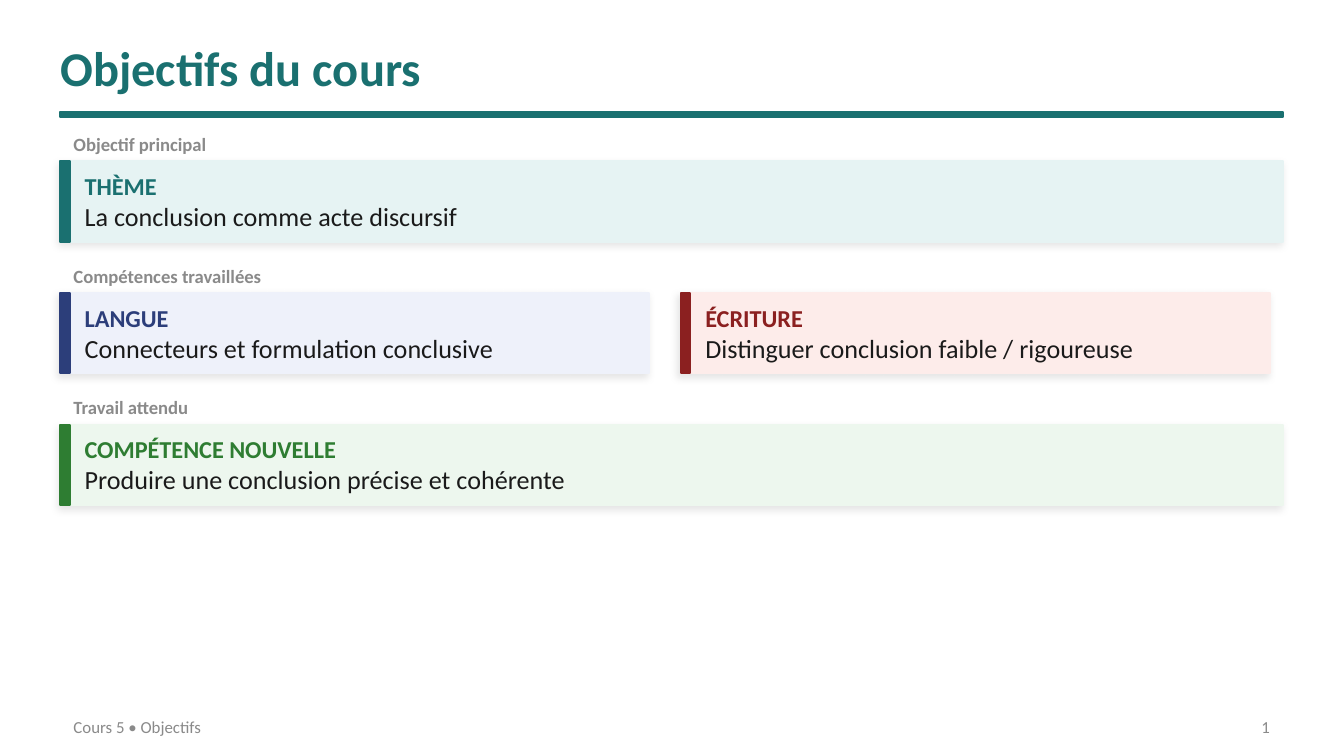
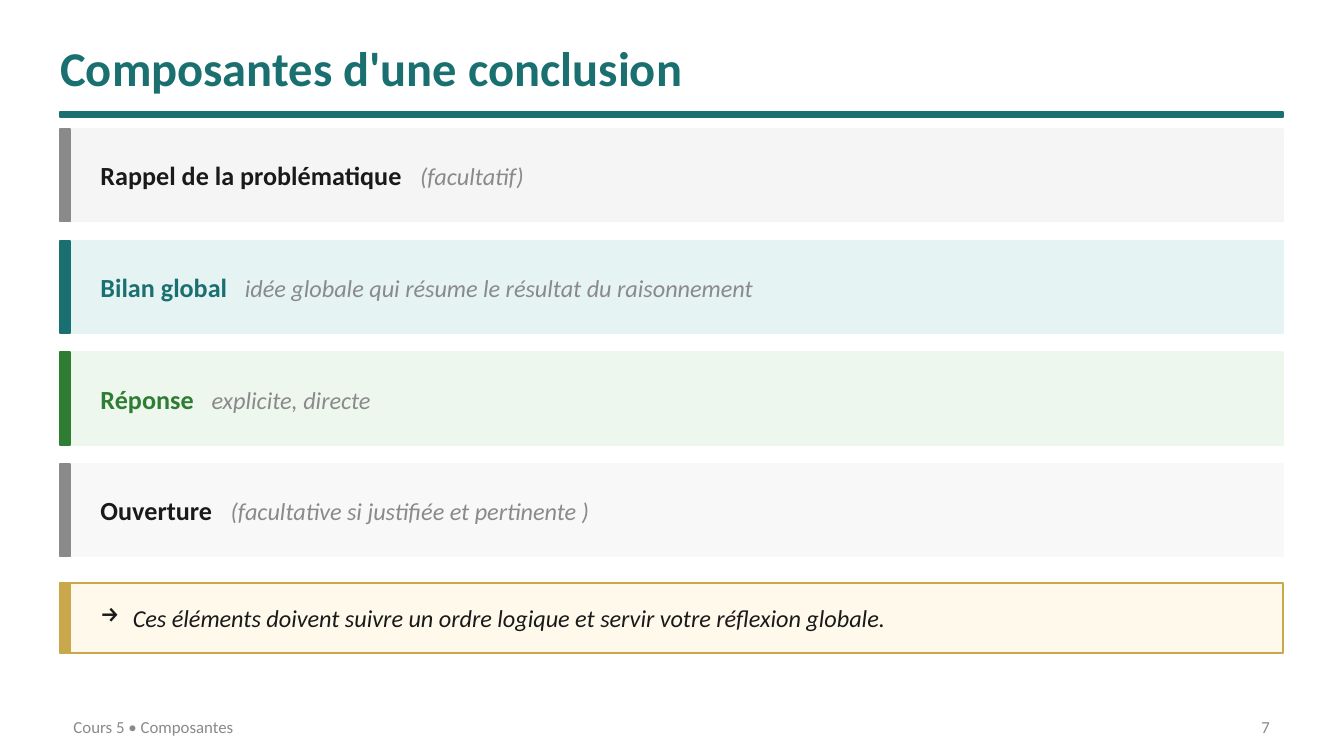
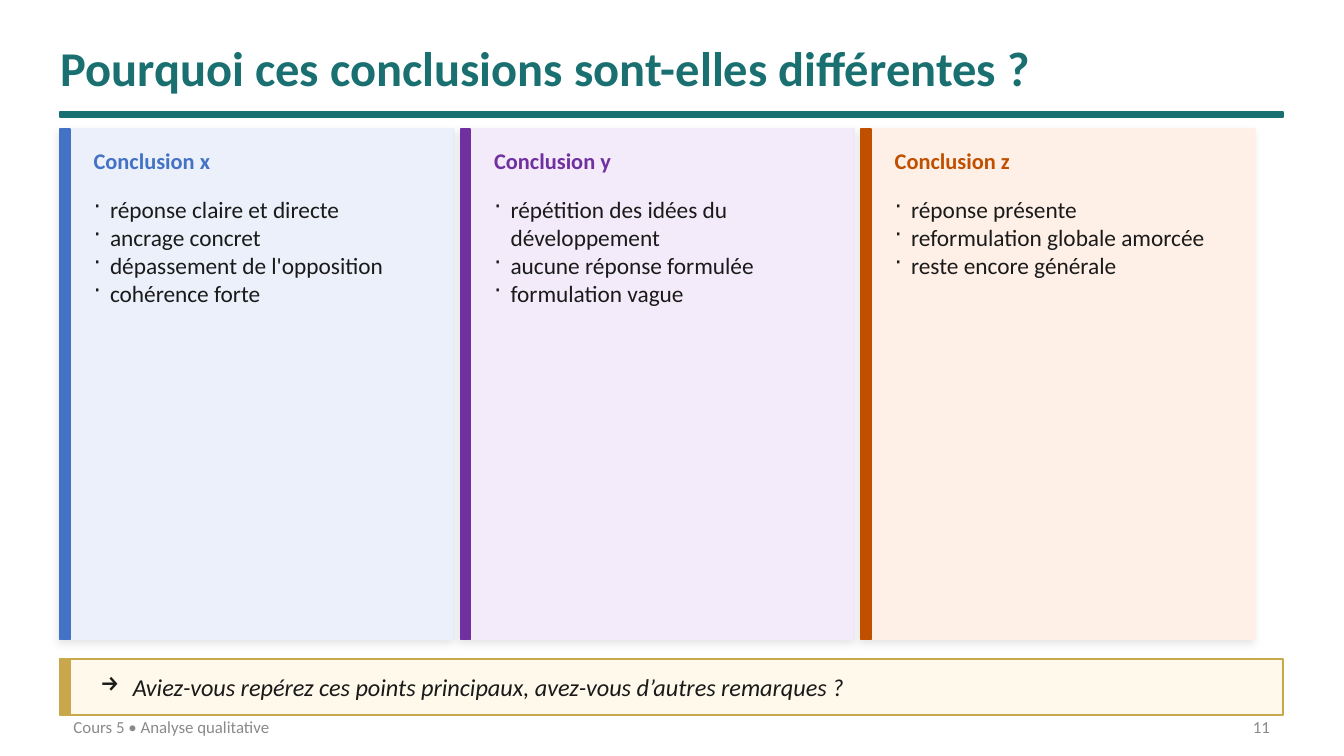
from lxml import etree
from pptx import Presentation
from pptx.dml.color import RGBColor
from pptx.enum.shapes import MSO_SHAPE
from pptx.enum.text import MSO_ANCHOR, MSO_AUTO_SIZE, PP_ALIGN
from pptx.oxml.ns import qn
from pptx.util import Cm, Pt

RECT = MSO_SHAPE.RECTANGLE
TOP, MIDDLE = MSO_ANCHOR.TOP, MSO_ANCHOR.MIDDLE
LEFT, RIGHT = PP_ALIGN.LEFT, PP_ALIGN.RIGHT
NO_FIT = MSO_AUTO_SIZE.NONE

FONT = "Calibri"
INK = RGBColor(0x1A, 0x1A, 0x1A)
GRAY = RGBColor(0x8A, 0x8A, 0x8A)
MIST = RGBColor(0xF5, 0xF5, 0xF5)
SNOW = RGBColor(0xF8, 0xF8, 0xF8)
TEAL = RGBColor(0x1A, 0x70, 0x70)
AQUA = RGBColor(0xE6, 0xF3, 0xF3)
NAVY = RGBColor(0x2C, 0x3E, 0x7A)
ICE = RGBColor(0xEE, 0xF1, 0xFA)
RED = RGBColor(0x8B, 0x20, 0x20)
ROSE = RGBColor(0xFD, 0xEC, 0xEA)
GREEN = RGBColor(0x2E, 0x7D, 0x32)
MINT = RGBColor(0xED, 0xF7, 0xEE)
GOLD = RGBColor(0xC8, 0xA8, 0x4B)
CREAM = RGBColor(0xFE, 0xF9, 0xEB)
BLUE = RGBColor(0x44, 0x72, 0xC4)
SKY = RGBColor(0xEB, 0xF0, 0xFA)
PLUM = RGBColor(0x70, 0x30, 0xA0)
LILAC = RGBColor(0xF3, 0xEB, 0xF9)
RUST = RGBColor(0xC0, 0x50, 0x00)
PEACH = RGBColor(0xFE, 0xF0, 0xE6)

EDGE, WIDE, START = 1.14, 23.11, 2.44
BAR = 0.18
INSET = (0.25, 0.13, 0.25, 0.13)


def write(para, words, size=13, color=INK, bold=False, ital=False):
    """Add one formatted run to a paragraph."""
    run = para.add_run()
    run.text = words
    font = run.font
    font.name, font.size, font.bold, font.italic = FONT, Pt(size), bold, ital
    font.color.rgb = color


def set_frame(frame, inset=INSET, anchor=MIDDLE):
    """Set wrapping, margins and anchor, and return the first paragraph."""
    frame.word_wrap, frame.auto_size = True, NO_FIT
    frame.vertical_anchor = anchor
    (frame.margin_left, frame.margin_top,
     frame.margin_right, frame.margin_bottom) = map(Cm, inset)
    return frame.paragraphs[0]


def add_text(slide, box, **style):
    """Add a text box and return its frame."""
    frame = slide.shapes.add_textbox(*map(Cm, box)).text_frame
    set_frame(frame, **style)
    return frame


def add_line(slide, box, words, **style):
    """Add a text box holding one run and return its paragraph."""
    para = add_text(slide, box).paragraphs[0]
    write(para, words, **style)
    return para


def bullet(para, sign, gap):
    """Give a paragraph a hanging bullet."""
    props = para._p.get_or_add_pPr()
    props.set("marL", str(Cm(gap)))
    props.set("indent", str(-Cm(gap)))
    etree.SubElement(props, qn("a:buChar"), char=sign)


def tab_stop(para, pos):
    """Add a left tab stop to a paragraph."""
    tabs = etree.SubElement(para._p.get_or_add_pPr(), qn("a:tabLst"))
    etree.SubElement(tabs, qn("a:tab"), pos=str(Cm(pos)), algn="l")


def shade(shape):
    """Give a shape a soft shadow."""
    effects = shape._element.spPr.find(qn("a:effectLst"))
    outer = etree.SubElement(
        effects, qn("a:outerShdw"), blurRad=str(Pt(4)), dist=str(Pt(2)),
        dir=str(135 * 60000), algn="bl", rotWithShape="0")
    tint = etree.SubElement(outer, qn("a:srgbClr"), val="000000")
    etree.SubElement(tint, qn("a:alpha"), val="10000")


def add_rect(slide, box, fill, line=None):
    """Add a flat rectangle with a thin line."""
    rect = slide.shapes.add_shape(RECT, *map(Cm, box))
    rect.shadow.inherit = False
    rect.fill.solid()
    rect.fill.fore_color.rgb = fill
    rect.line.color.rgb = line or fill
    rect.line.width = Pt(1)
    return rect


def panel(slide, box, fill, accent, line=None, lift=False):
    """Draw a panel with an accent bar on its left side."""
    left, top, _, high = box
    rect = add_rect(slide, box, fill, line)
    if lift:
        shade(rect)
    add_rect(slide, (left, top, BAR, high), accent)


def inner(box):
    """Return the text area of a full-width band."""
    left, top, wide, high = box
    return left + 0.51, top, wide - 1.02, high


def card(slide, box, head, body, fill, accent):
    """Draw a raised card with a heading over one line."""
    left, top, wide, high = box
    panel(slide, box, fill, accent, lift=True)
    frame = add_text(slide, (left + 0.46, top, wide - 0.66, high),
                     inset=(0, 0, 0.28, 0))
    write(frame.paragraphs[0], head, color=accent, bold=True)
    write(frame.add_paragraph(), body, size=14)


def band(slide, box, name, hint, stop, fill, accent, color):
    """Draw a band with a bold name and an italic hint."""
    panel(slide, box, fill, accent)
    para = add_line(slide, inner(box), name, size=14, color=color, bold=True)
    tab_stop(para, stop)
    write(para, "\t" + hint, color=GRAY, ital=True)


def column(slide, box, head, points, fill, accent):
    """Draw a raised column with a heading and a list."""
    left, top, wide, _ = box
    panel(slide, box, fill, accent, lift=True)
    left, wide = left + 0.38, wide - 0.56
    add_line(slide, (left, top + 0.25, wide, 0.71), head,
             size=12, color=accent, bold=True)
    frame = add_text(slide, (left, top + 1.12, wide, 8.23), anchor=TOP)
    for i, point in enumerate(points):
        para = frame.add_paragraph() if i else frame.paragraphs[0]
        bullet(para, "·", 0.31)
        write(para, point, size=12.5)


def note(slide, box, words):
    """Draw the golden closing remark."""
    panel(slide, box, CREAM, GOLD, line=GOLD)
    para = add_line(slide, inner(box), words, ital=True)
    bullet(para, "→", 0.61)


def base(deck, title, topic, number):
    """Add a slide with its title, rule and footer."""
    slide = deck.slides.add_slide(deck.slide_layouts[5])
    head = slide.shapes.title
    head.left, head.top, head.width, head.height = map(
        Cm, (EDGE, 0.51, WIDE, 1.52))
    para = set_frame(head.text_frame, inset=(0, 0, 0, 0))
    para.alignment = LEFT
    write(para, title, size=26, color=TEAL, bold=True)
    add_rect(slide, (EDGE, 2.11, WIDE, 0.1), TEAL)
    add_line(slide, (EDGE, 13.49, 16.51, 0.51), f"Cours 5 • {topic}",
             size=9, color=GRAY)
    page = add_line(slide, (21.84, 13.49, 2.41, 0.51), str(number),
                    size=9, color=GRAY)
    page.alignment = RIGHT
    return slide


def goals(deck):
    """Build the slide of course goals."""
    slide = base(deck, "Objectifs du cours", "Objectifs", 1)
    half = 11.13
    groups = [
        ("Objectif principal", WIDE,
         [("THÈME", "La conclusion comme acte discursif", AQUA, TEAL)]),
        ("Compétences travaillées", half,
         [("LANGUE", "Connecteurs et formulation conclusive", ICE, NAVY),
          ("ÉCRITURE", "Distinguer conclusion faible / rigoureuse",
           ROSE, RED)]),
        ("Travail attendu", WIDE,
         [("COMPÉTENCE NOUVELLE",
           "Produire une conclusion précise et cohérente", MINT, GREEN)]),
    ]
    for i, (label, wide, cards) in enumerate(groups):
        top = START + i * 2.49
        add_line(slide, (EDGE, top, WIDE, 0.56), label,
                 size=10, color=GRAY, bold=True)
        for j, parts in enumerate(cards):
            left = EDGE + j * (wide + 0.6)
            card(slide, (left, top + 0.61, wide, 1.52), *parts)


def pieces(deck):
    """Build the slide of the parts of a conclusion."""
    slide = base(deck, "Composantes d'une conclusion", "Composantes", 7)
    bands = [
        ("Rappel de la problématique", "(facultatif)", 6.04,
         MIST, GRAY, INK),
        ("Bilan global",
         "idée globale qui résume le résultat du raisonnement", 2.73,
         AQUA, TEAL, TEAL),
        ("Réponse", "explicite, directe", 2.1, MINT, GREEN, GREEN),
        ("Ouverture", "(facultative si justifiée et pertinente )", 2.46,
         SNOW, GRAY, INK),
    ]
    for i, parts in enumerate(bands):
        band(slide, (EDGE, START + i * 2.11, WIDE, 1.75), *parts)
    note(slide, (EDGE, 11.02, WIDE, 1.32),
         "Ces éléments doivent suivre un ordre logique et servir "
         "votre réflexion globale.")


def compare(deck):
    """Build the slide comparing three conclusions."""
    slide = base(deck, "Pourquoi ces conclusions sont-elles différentes ?",
                 "Analyse qualitative", 11)
    columns = [
        ("Conclusion x",
         ["réponse claire et directe", "ancrage concret",
          "dépassement de l'opposition", "cohérence forte"], SKY, BLUE),
        ("Conclusion y",
         ["répétition des idées du développement",
          "aucune réponse formulée", "formulation vague"], LILAC, PLUM),
        ("Conclusion z",
         ["réponse présente", "reformulation globale amorcée",
          "reste encore générale"], PEACH, RUST),
    ]
    for i, parts in enumerate(columns):
        column(slide, (EDGE + i * 7.57, START, 7.44, 9.65), *parts)
    note(slide, (EDGE, 12.45, WIDE, 1.07),
         "Aviez-vous repérez ces points principaux, "
         "avez-vous d’autres remarques ?")


def main():
    """Build and save the deck."""
    deck = Presentation()
    deck.slide_width, deck.slide_height = Cm(25.4), Cm(14.29)
    for build in (goals, pieces, compare):
        build(deck)
    deck.save("out.pptx")


if __name__ == "__main__":
    main()
